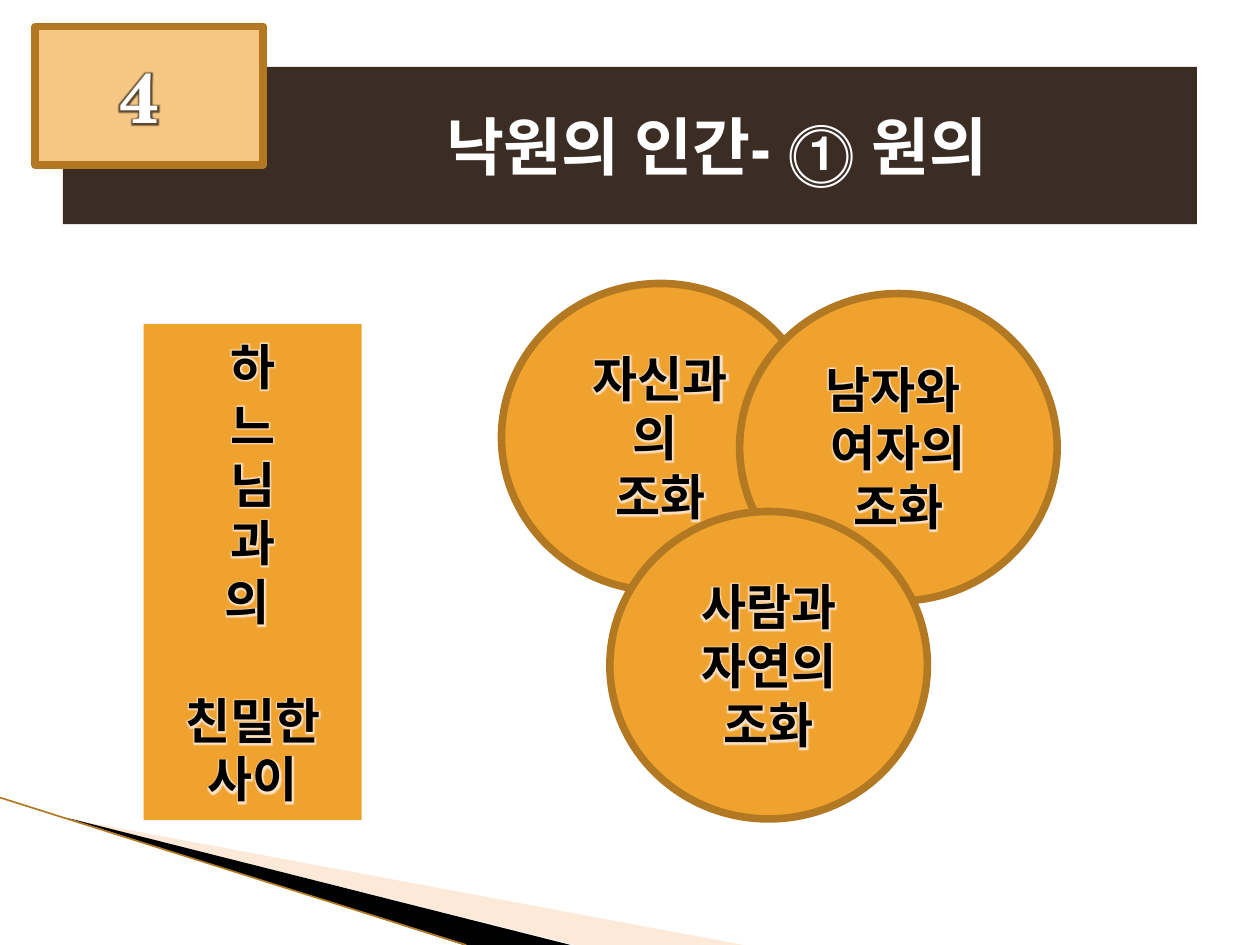
from dataclasses import dataclass
from typing import Optional

from lxml.etree import SubElement
from pptx import Presentation
from pptx.dml.color import RGBColor
from pptx.enum.shapes import MSO_CONNECTOR, MSO_SHAPE as Shape
from pptx.enum.text import MSO_ANCHOR, PP_ALIGN as Align
from pptx.oxml import parse_xml
from pptx.oxml.ns import nsdecls, qn
from pptx.util import Inches, Pt

FONT = "TeX Gyre Schola"
COLORS = {
    "brown": "3B2C24", "orange": "F0A22E", "border": "B27822",
    "badge": "F6C782", "peach": "FBC99E", "glow": "FCE3C8",
    "dark_glow": "5A4630", "black": "000000", "white": "FFFFFF",
}


@dataclass
class Panel:
    left: float
    top: float
    width: float
    height: float
    lines: list[str]
    shape: Shape = Shape.RECTANGLE
    fill: str = "orange"
    border: bool = False
    size: int = 28
    color: str = "black"
    glow: Optional[str] = "glow"
    align: Align = Align.CENTER
    indent: float = 0.1


@dataclass
class Wedge:
    points: list[tuple[float, float]]
    fill: str
    opacity: int = 100


def rgb(name: str) -> RGBColor:
    return RGBColor.from_string(COLORS[name])


def add_glow(span, color: str) -> None:
    """Put a soft glow behind the letters, right after their fill."""
    effects = parse_xml(
        f'<a:effectLst {nsdecls("a")}><a:glow rad="50800">'
        f'<a:srgbClr val="{COLORS[color]}"/></a:glow></a:effectLst>')
    span.font._element.find(qn("a:solidFill")).addnext(effects)


def add_panel(page, panel: Panel):
    box = page.shapes.add_shape(
        panel.shape, Inches(panel.left), Inches(panel.top),
        Inches(panel.width), Inches(panel.height))
    box.shadow.inherit = False
    box.fill.solid()
    box.fill.fore_color.rgb = rgb(panel.fill)
    if panel.border:
        box.line.color.rgb = rgb("border")
        box.line.width = Pt(4.33)
    else:
        box.line.fill.background()

    frame = box.text_frame
    frame.word_wrap = True
    frame.vertical_anchor = MSO_ANCHOR.MIDDLE
    frame.margin_left = Inches(panel.indent)
    frame.text = "\n".join(panel.lines)
    for para in frame.paragraphs:
        para.alignment = panel.align
        for span in para.runs:
            span.font.name = FONT
            span.font.size = Pt(panel.size)
            span.font.bold = True
            span.font.color.rgb = rgb(panel.color)
            if panel.glow:
                add_glow(span, panel.glow)
    return box


def add_wedge(page, wedge: Wedge) -> None:
    start, *rest = [(Inches(x), Inches(y)) for x, y in wedge.points]
    builder = page.shapes.build_freeform(*start)
    builder.add_line_segments(rest, close=True)
    outline = builder.convert_to_shape()
    outline.shadow.inherit = False
    outline.line.fill.background()
    outline.fill.solid()
    outline.fill.fore_color.rgb = rgb(wedge.fill)
    if wedge.opacity < 100:
        color = outline._element.spPr.find(".//" + qn("a:srgbClr"))
        SubElement(color, qn("a:alpha"), val=str(wedge.opacity * 1000))


def add_edge(page) -> None:
    edge = page.shapes.add_connector(
        MSO_CONNECTOR.STRAIGHT, Inches(0), Inches(6.33), Inches(3.7), Inches(7.5))
    edge.line.color.rgb = rgb("border")
    edge.line.width = Pt(0.95)
    SubElement(edge._element.spPr, qn("a:effectLst"))


def circle(left: float, top: float, lines: list[str]) -> Panel:
    return Panel(left, top, 2.52, 2.44, lines, Shape.OVAL, border=True)


WEDGES = [
    Wedge([(0.55, 6.5), (5.9, 7.5), (4.56, 7.5)], "peach", 40),
    Wedge([(0.53, 6.49), (4.53, 7.5), (3.68, 7.5)], "black"),
]
TITLE = Panel(0.5, 0.53, 9, 1.25, ["낙원의 인간- ⓵ 원의"], fill="brown", size=36,
              color="white", glow=None, align=Align.LEFT, indent=3.04)
INTIMACY = Panel(1.14, 2.57, 1.73, 3.94, ["하", "느", "님", "과", "의 ", "친밀한 사이"])
CIRCLES = [
    circle(3.98, 2.25, ["자신과", "의 ", "조화"]),
    circle(5.87, 2.33, ["남자와 ", "여자의 조화"]),
    circle(4.84, 4.06, ["사람과", "자연의 조화"]),
]
BADGE = Panel(0.28, 0.21, 1.81, 1.1, ["4 "], fill="badge", border=True,
              size=40, color="white", glow="dark_glow")


def main() -> None:
    deck = Presentation()
    deck.slide_width, deck.slide_height = Inches(10), Inches(7.5)
    page = deck.slides.add_slide(deck.slide_layouts[6])

    # Corner decoration
    for wedge in WEDGES:
        add_wedge(page, wedge)
    add_edge(page)

    # Title band and the column, with a one-line gap before its last words
    add_panel(page, TITLE)
    column = add_panel(page, INTIMACY)
    column.text_frame.paragraphs[-1].space_before = Pt(34)

    # Three harmonies and the number badge
    for panel in [*CIRCLES, BADGE]:
        add_panel(page, panel)

    deck.save("out.pptx")


if __name__ == "__main__":
    main()
